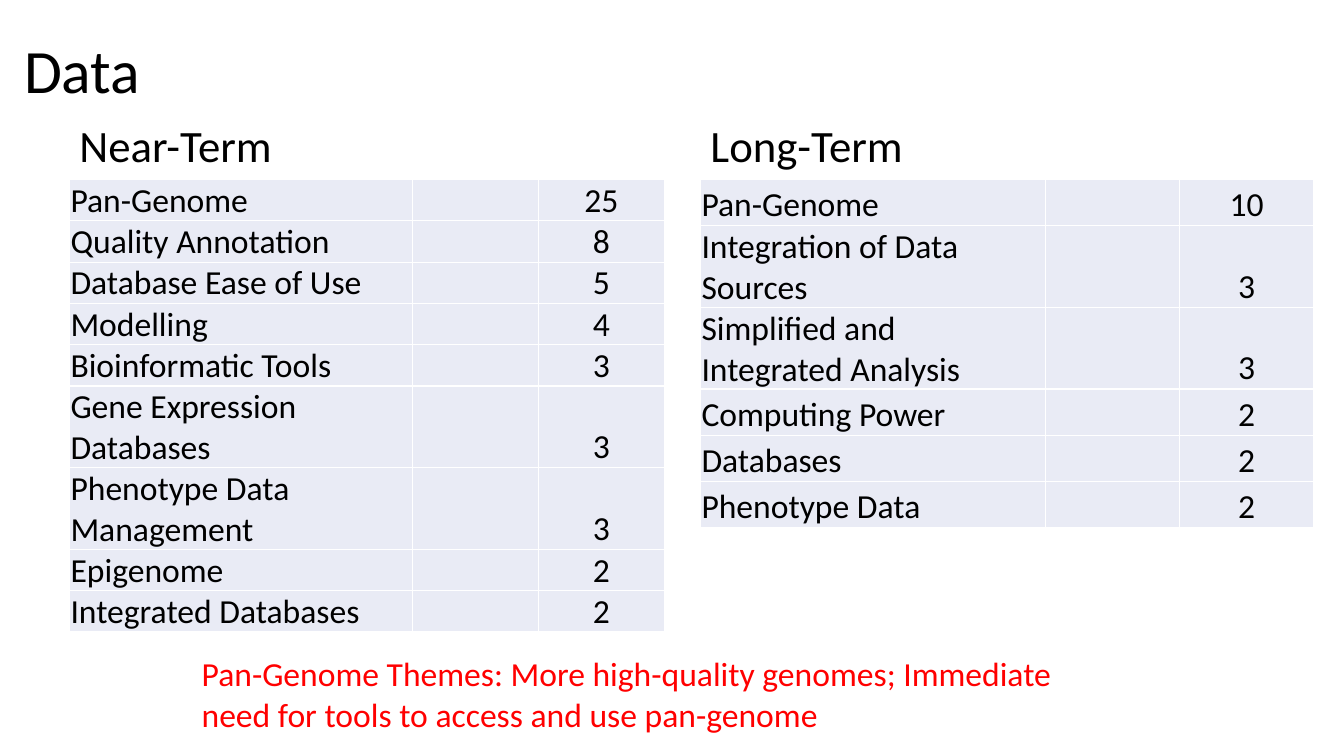
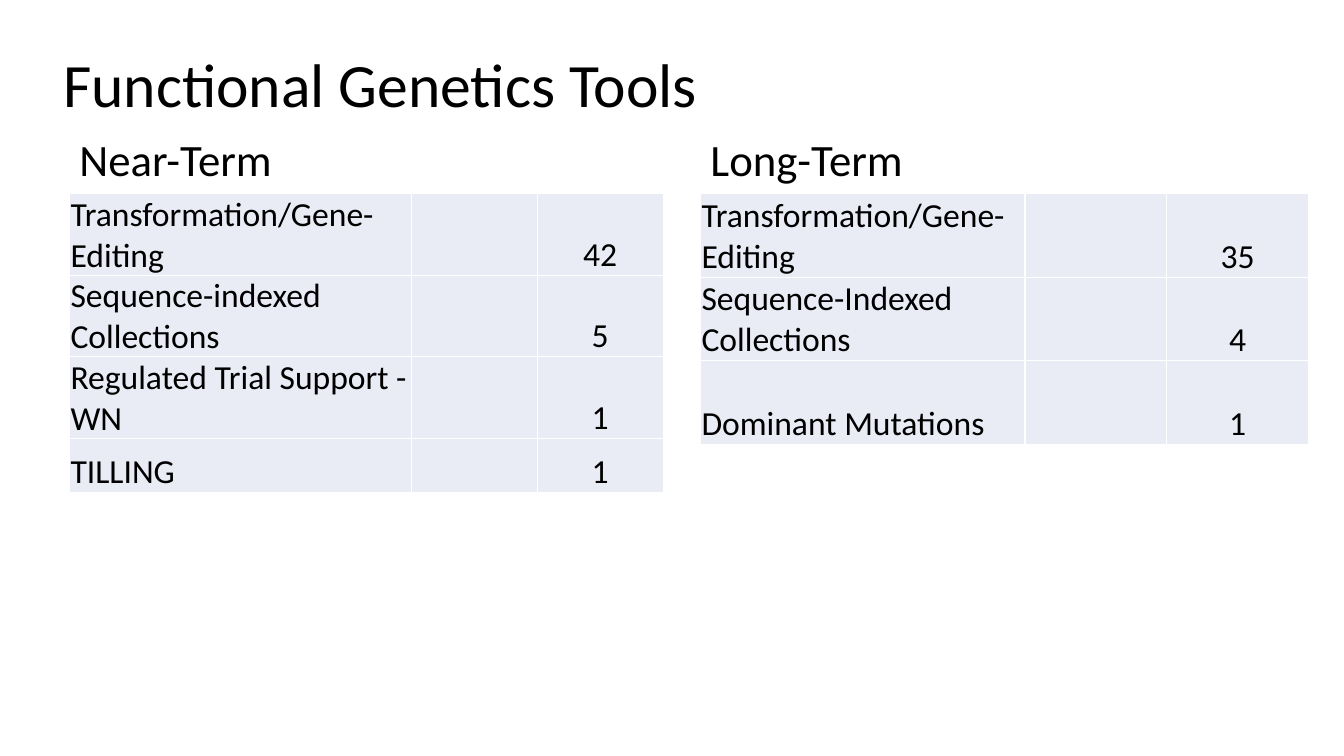
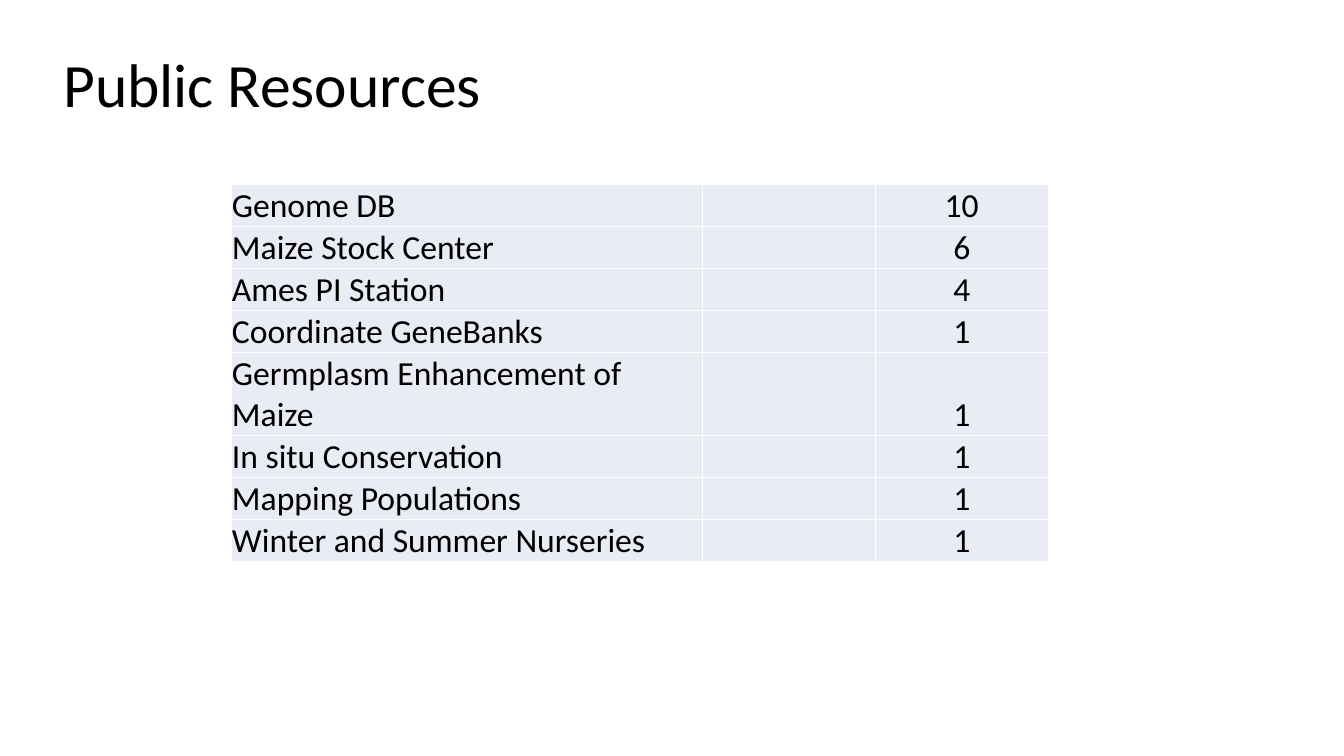
import pptx
import pptx.util
import pptx.dml.color
import pptx.enum.text

Pt = pptx.util.Pt
RGBColor = pptx.dml.color.RGBColor
PP_ALIGN = pptx.enum.text.PP_ALIGN
MSO_ANCHOR = pptx.enum.text.MSO_ANCHOR
MSO_AUTO_SIZE = pptx.enum.text.MSO_AUTO_SIZE

# Shared style
FONT = "Calibri"
BLACK = RGBColor(0x00, 0x00, 0x00)
RED = RGBColor(0xFF, 0x00, 0x00)
PALE_BLUE = RGBColor(0xE9, 0xEB, 0xF5)
TITLE_SIZE, HEADING_SIZE, TEXT_SIZE = 44, 32, 24

# Shared positions, in points
SLIDE_WIDTH, SLIDE_HEIGHT = 960, 540
TITLE_LEFT, TITLE_TOP = 38, 10
TITLE_WIDTH, TITLE_HEIGHT = 828, 104.4
NEAR_LEFT, LONG_LEFT = 49.7, 500.4
HEADING_DROP, TABLE_DROP = 80.8, 128.2  # below the top of the title
CELL_INSET = 0.7

# Themes and votes
DATA_NEAR = [
    ("Pan-Genome", 25), ("Quality Annotation", 8), ("Database Ease of Use", 5),
    ("Modelling", 4), ("Bioinformatic Tools", 3),
    ("Gene Expression Databases", 3), ("Phenotype Data Management", 3),
    ("Epigenome", 2), ("Integrated Databases", 2),
]
DATA_LONG = [
    ("Pan-Genome", 10), ("Integration of Data Sources", 3),
    ("Simplified and Integrated Analysis", 3), ("Computing Power", 2),
    ("Databases", 2), ("Phenotype Data", 2),
]
TOOLS_NEAR = [
    ("Transformation/Gene-Editing", 42), ("Sequence-indexed Collections", 5),
    ("Regulated Trial Support - WN", 1), ("TILLING", 1),
]
TOOLS_LONG = [
    ("Transformation/Gene-Editing", 35), ("Sequence-Indexed Collections", 4),
    ("Dominant Mutations", 1),
]
RESOURCES = [
    ("Genome DB", 10), ("Maize Stock Center", 6), ("Ames PI Station", 4),
    ("Coordinate GeneBanks", 1), ("Germplasm Enhancement of Maize", 1),
    ("In situ Conservation", 1), ("Mapping Populations", 1),
    ("Winter and Summer Nurseries", 1),
]


def place(shape, left, top, width, height):
    shape.left, shape.top = Pt(left), Pt(top)
    shape.width, shape.height = Pt(width), Pt(height)


def write(frame, text, size, color=BLACK, align=PP_ALIGN.LEFT):
    """Put one formatted paragraph into a text frame."""
    frame.text = text
    paragraph = frame.paragraphs[0]
    paragraph.alignment = align
    font = paragraph.runs[0].font
    font.name, font.size, font.color.rgb = FONT, Pt(size), color
    return paragraph


def add_titled_slide(deck, layout, title, left=TITLE_LEFT, top=TITLE_TOP):
    slide = deck.slides.add_slide(layout)
    heading = slide.shapes.title
    place(heading, left, top, TITLE_WIDTH, TITLE_HEIGHT)
    frame = heading.text_frame
    write(frame, title, TITLE_SIZE).line_spacing = 0.9
    frame.auto_size = MSO_AUTO_SIZE.NONE
    frame.vertical_anchor = MSO_ANCHOR.MIDDLE
    return slide


def add_text(slide, text, left, top, width, height, size, color=BLACK):
    box = slide.shapes.add_textbox(Pt(left), Pt(top), Pt(width), Pt(height))
    box.text_frame.word_wrap = True
    write(box.text_frame, text, size, color)


def add_votes(slide, votes, left, top, theme_width, count_width, row_height):
    """Add a table of themes, an empty column and vote counts."""
    widths = (theme_width, count_width, count_width)
    table = slide.shapes.add_table(
        len(votes), len(widths), Pt(left), Pt(top),
        Pt(sum(widths)), Pt(row_height * len(votes))).table
    table.first_row = table.horz_banding = False
    for column, width in zip(table.columns, widths):
        column.width = Pt(width)
    for row, (theme, count) in zip(table.rows, votes):
        row.height = Pt(row_height)
        for cell in row.cells:
            cell.fill.solid()
            cell.fill.fore_color.rgb = PALE_BLUE
            cell.vertical_anchor = MSO_ANCHOR.BOTTOM
            cell.margin_left = cell.margin_right = Pt(CELL_INSET)
            cell.margin_top, cell.margin_bottom = Pt(CELL_INSET), Pt(0)
        write(row.cells[0].text_frame, theme, TEXT_SIZE)
        write(row.cells[2].text_frame, str(count), TEXT_SIZE,
              align=PP_ALIGN.CENTER)


def add_term(slide, heading, votes, left, title_top, *table_sizes):
    """Add a heading with its table of votes beneath."""
    add_text(slide, heading, left, title_top + HEADING_DROP, 250, 46,
             HEADING_SIZE)
    add_votes(slide, votes, left, title_top + TABLE_DROP, *table_sizes)


def main():
    deck = pptx.Presentation()
    deck.slide_width, deck.slide_height = Pt(SLIDE_WIDTH), Pt(SLIDE_HEIGHT)
    title_only = deck.slide_layouts[5]

    # Data
    data = add_titled_slide(deck, title_only, "Data", left=10, top=0)
    add_term(data, "Near-Term", DATA_NEAR, NEAR_LEFT, 0, 244.8, 90, 29)
    add_term(data, "Long-Term", DATA_LONG, LONG_LEFT, 0, 246.4, 95.8, 33)
    add_text(data, "Pan-Genome Themes: More high-quality genomes; Immediate "
             "need for tools to access and use pan-genome",
             137, 463, 643.7, 65.5, TEXT_SIZE, RED)

    # Functional genetics tools
    tools = add_titled_slide(deck, title_only, "Functional Genetics Tools")
    add_term(tools, "Near-Term", TOOLS_NEAR, NEAR_LEFT, TITLE_TOP,
             244, 90, 38.7)
    add_term(tools, "Long-Term", TOOLS_LONG, LONG_LEFT, TITLE_TOP,
             231.8, 101.3, 59.8)

    # Public resources
    resources = add_titled_slide(deck, title_only, "Public Resources")
    add_votes(resources, RESOURCES, 165, 131.8, 336.6, 123.6, 29.4)

    deck.save("out.pptx")


if __name__ == "__main__":
    main()
